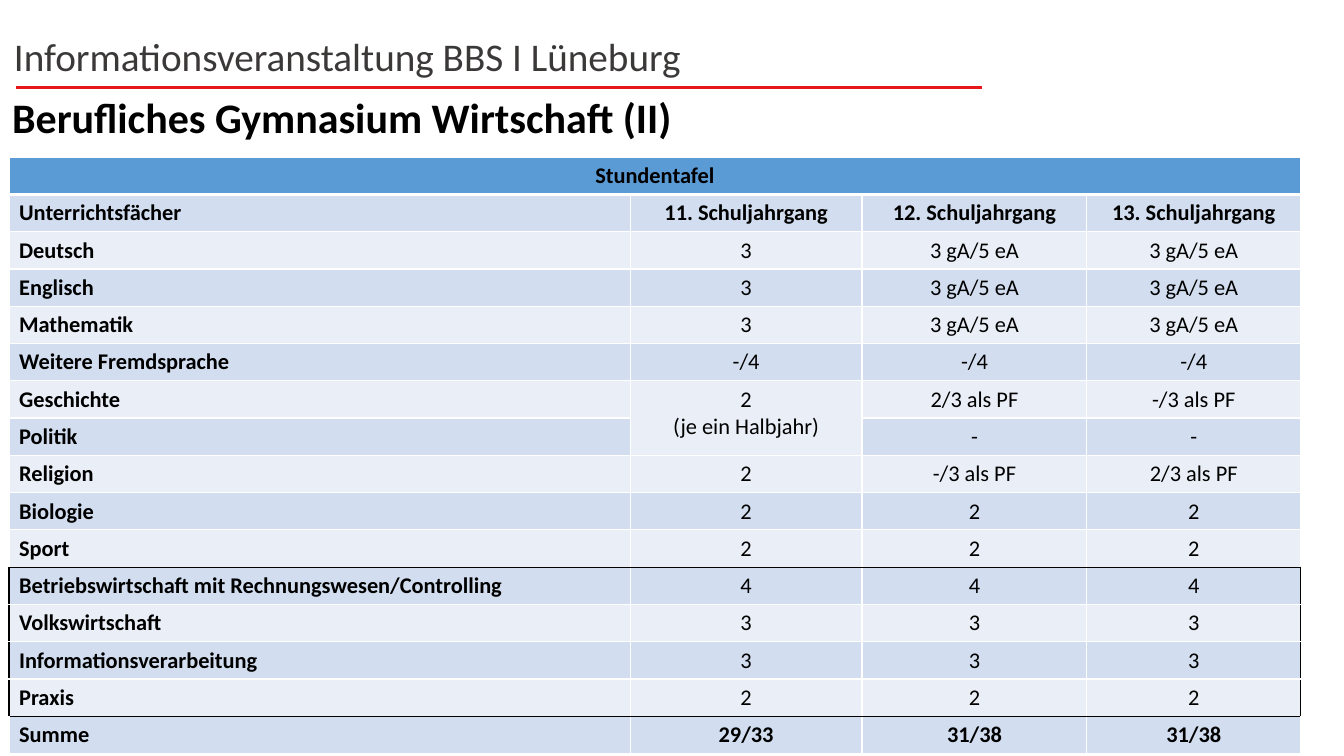
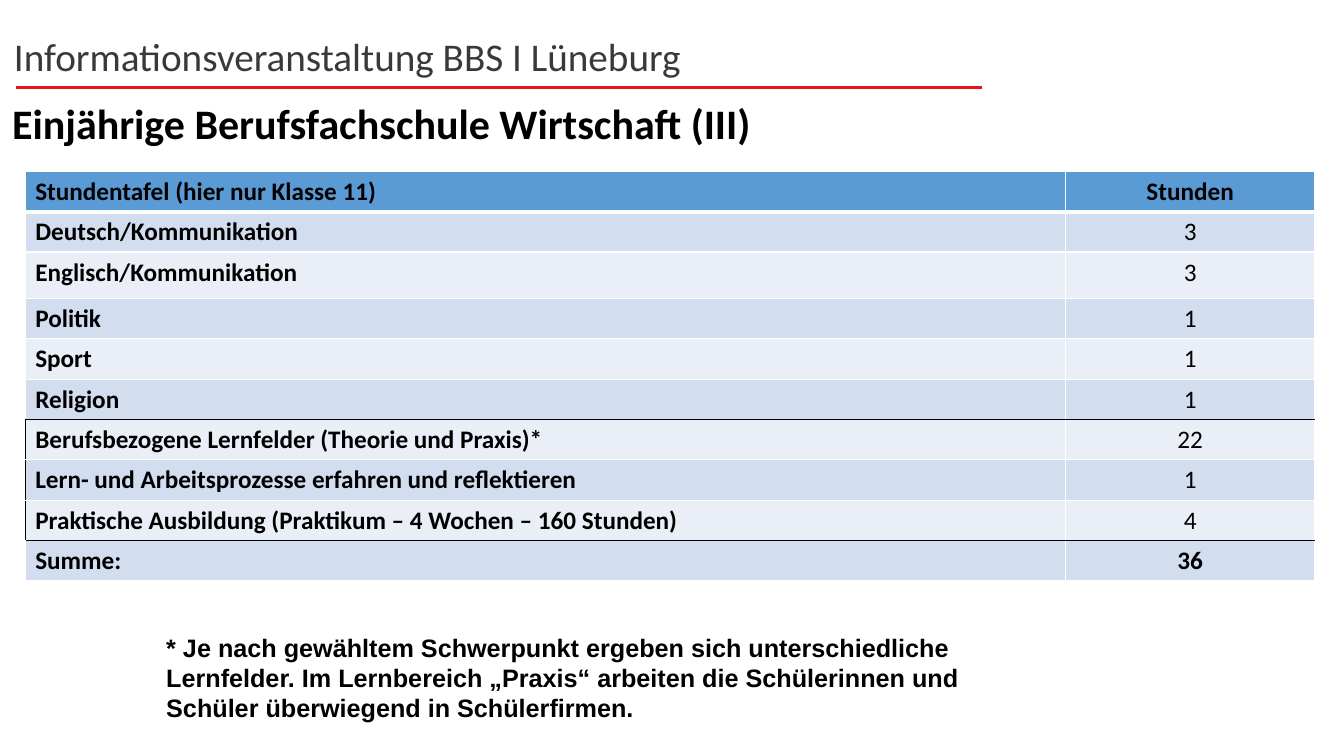
from lxml import etree
from pptx import Presentation
from pptx.dml.color import RGBColor
from pptx.enum import shapes, text
from pptx.oxml import ns
from pptx.util import Inches, Pt

COLORS = {
    "rule": "E4171A", "event": "3B3838", "text": "000000", "frame": "000000",
    "grid": "FFFFFF", "header": "5B9BD5", "odd": "D2DEEF", "even": "EAEFF7",
}
FONT = "Calibri"
EVENT = "Informationsveranstaltung BBS I Lüneburg"
FOOTNOTE = (
    "* Je nach gewähltem Schwerpunkt ergeben sich unterschiedliche Lernfelder. "
    "Im Lernbereich „Praxis“ arbeiten die Schülerinnen und Schüler überwiegend "
    "in Schülerfirmen."
)

# A None cell is covered by a merged neighbour; "framed" holds first and last row.
GYMNASIUM = {
    "title": "Berufliches Gymnasium Wirtschaft (II)",
    "title_box": (0.02, 0.99, 13.22, 0.47),
    "position": (0.09, 1.56),
    "columns": [6.16, 2.3, 2.23, 2.12],
    "row_height": 0.37,
    "taller_rows": {},
    "size": 16,
    "bold_rows": 2,
    "merges": [((0, 0), (0, 3)), ((6, 1), (7, 1))],
    "framed": (11, 14),
    "frame_right": True,
    "rows": [
        ("Stundentafel", None, None, None),
        ("Unterrichtsfächer", "11. Schuljahrgang", "12. Schuljahrgang", "13. Schuljahrgang"),
        ("Deutsch", "3", "3 gA/5 eA", "3 gA/5 eA"),
        ("Englisch", "3", "3 gA/5 eA", "3 gA/5 eA"),
        ("Mathematik", "3", "3 gA/5 eA", "3 gA/5 eA"),
        ("Weitere Fremdsprache", "-/4", "-/4", "-/4"),
        ("Geschichte", "2\n(je ein Halbjahr)", "2/3 als PF", "-/3 als PF"),
        ("Politik", None, "-", "-"),
        ("Religion", "2", "-/3 als PF", "2/3 als PF"),
        ("Biologie", "2", "2", "2"),
        ("Sport", "2", "2", "2"),
        ("Betriebswirtschaft mit Rechnungswesen/Controlling", "4", "4", "4"),
        ("Volkswirtschaft", "3", "3", "3"),
        ("Informationsverarbeitung", "3", "3", "3"),
        ("Praxis", "2", "2", "2"),
        ("Summe", "29/33", "31/38", "31/38"),
    ],
}
BERUFSFACHSCHULE = {
    "title": "Einjährige Berufsfachschule Wirtschaft (III)",
    "title_box": (0.02, 0.98, 13.22, 0.54),
    "position": (0.25, 1.7),
    "columns": [10.32, 2.47],
    "row_height": 0.4,
    "taller_rows": {2: 0.46},
    "size": 18,
    "bold_rows": 1,
    "merges": [],
    "framed": (6, 8),
    "frame_right": False,
    "rows": [
        ("Stundentafel (hier nur Klasse 11)", "Stunden"),
        ("Deutsch/Kommunikation", "3"),
        ("Englisch/Kommunikation", "3"),
        ("Politik", "1"),
        ("Sport", "1"),
        ("Religion", "1"),
        ("Berufsbezogene Lernfelder (Theorie und Praxis)*", "22"),
        ("Lern- und Arbeitsprozesse erfahren und reflektieren", "1"),
        ("Praktische Ausbildung (Praktikum – 4 Wochen – 160 Stunden)", "4"),
        ("Summe:", "36"),
    ],
}


def color(name):
    return RGBColor.from_string(COLORS[name])


def style(text_frame, size, bold=False, name="text", font=FONT,
          alignment=text.PP_ALIGN.LEFT):
    for paragraph in text_frame.paragraphs:
        paragraph.alignment = alignment
        for run in paragraph.runs:
            run.font.size = Pt(size)
            run.font.bold = bold
            run.font.name = font
            run.font.color.rgb = color(name)


def add_text(slide, box, content, **look):
    text_frame = slide.shapes.add_textbox(*map(Inches, box)).text_frame
    text_frame.word_wrap = True
    text_frame.text = content
    style(text_frame, **look)


def add_heading(slide, title, box):
    """Add the event line, the red rule and the slide title."""
    rule = slide.shapes.add_connector(
        shapes.MSO_CONNECTOR.STRAIGHT, Inches(9.74), Inches(0.87), Inches(0.16), Inches(0.87))
    rule.line.color.rgb = color("rule")
    rule.line.width = Pt(2.25)
    etree.SubElement(rule.element.spPr, ns.qn("a:effectLst"))
    add_text(slide, (0.04, 0.27, 9.35, 0.57), EVENT, size=28, name="event")

    shape = slide.shapes.title
    shape.left, shape.top, shape.width, shape.height = map(Inches, box)
    text_frame = shape.text_frame
    text_frame.text = title
    text_frame.auto_size = text.MSO_AUTO_SIZE.NONE
    text_frame.vertical_anchor = text.MSO_ANCHOR.BOTTOM
    text_frame.paragraphs[0].line_spacing = 0.9
    style(text_frame, 30, bold=True)


def set_borders(cell, borders):
    """Draw each side (L, R, T, B) with its colour name and width in points."""
    properties = cell._tc.get_or_add_tcPr()
    for side, (name, width) in borders.items():
        line = etree.SubElement(properties, ns.qn(f"a:ln{side}"), w=str(Pt(width)))
        fill = etree.SubElement(line, ns.qn("a:solidFill"))
        etree.SubElement(fill, ns.qn("a:srgbClr"), val=COLORS[name])


def cell_borders(plan, row, column):
    first, last = plan["framed"]
    inside = first <= row <= last
    right_edge = column == len(plan["columns"]) - 1 and plan["frame_right"]

    def side(framed, width=1):
        return ("frame" if framed else "grid", width)

    return {
        "L": side(inside and column == 0),
        "R": side(inside and right_edge),
        "T": side(row in (first, last + 1), 3 if row == 1 else 1),
        "B": side(row in (first - 1, last), 3 if row == 0 else 1),
    }


def add_timetable(slide, plan):
    rows, columns = plan["rows"], plan["columns"]
    heights = [plan["taller_rows"].get(row, plan["row_height"]) for row in range(len(rows))]
    table = slide.shapes.add_table(
        len(rows), len(columns), *map(Inches, plan["position"]),
        Inches(sum(columns)), Inches(sum(heights))).table
    table.horz_banding = False
    for column, width in enumerate(columns):
        table.columns[column].width = Inches(width)
    for start, end in plan["merges"]:
        table.cell(*start).merge(table.cell(*end))

    for row, values in enumerate(rows):
        table.rows[row].height = Inches(heights[row])
        band = "header" if row == 0 else "odd" if row % 2 else "even"
        bold_row = row < plan["bold_rows"] or row == len(rows) - 1
        for column, value in enumerate(values):
            cell = table.cell(row, column)
            set_borders(cell, cell_borders(plan, row, column))
            cell.fill.solid()
            cell.fill.fore_color.rgb = color(band)
            if value is None:
                continue
            cell.text_frame.text = value
            centered = column > 0 or cell.is_merge_origin
            style(cell.text_frame, plan["size"], bold=bold_row or column == 0,
                  alignment=text.PP_ALIGN.CENTER if centered else text.PP_ALIGN.LEFT)


def main():
    presentation = Presentation()
    presentation.slide_width, presentation.slide_height = Inches(13.33), Inches(7.5)
    title_only = presentation.slide_layouts[5]
    for plan in (GYMNASIUM, BERUFSFACHSCHULE):
        slide = presentation.slides.add_slide(title_only)
        add_heading(slide, plan["title"], plan["title_box"])
        add_timetable(slide, plan)
    add_text(slide, (1.55, 6.22, 9.02, 1.01), FOOTNOTE, size=18, bold=True, font="Arial")
    presentation.save("out.pptx")


if __name__ == "__main__":
    main()
